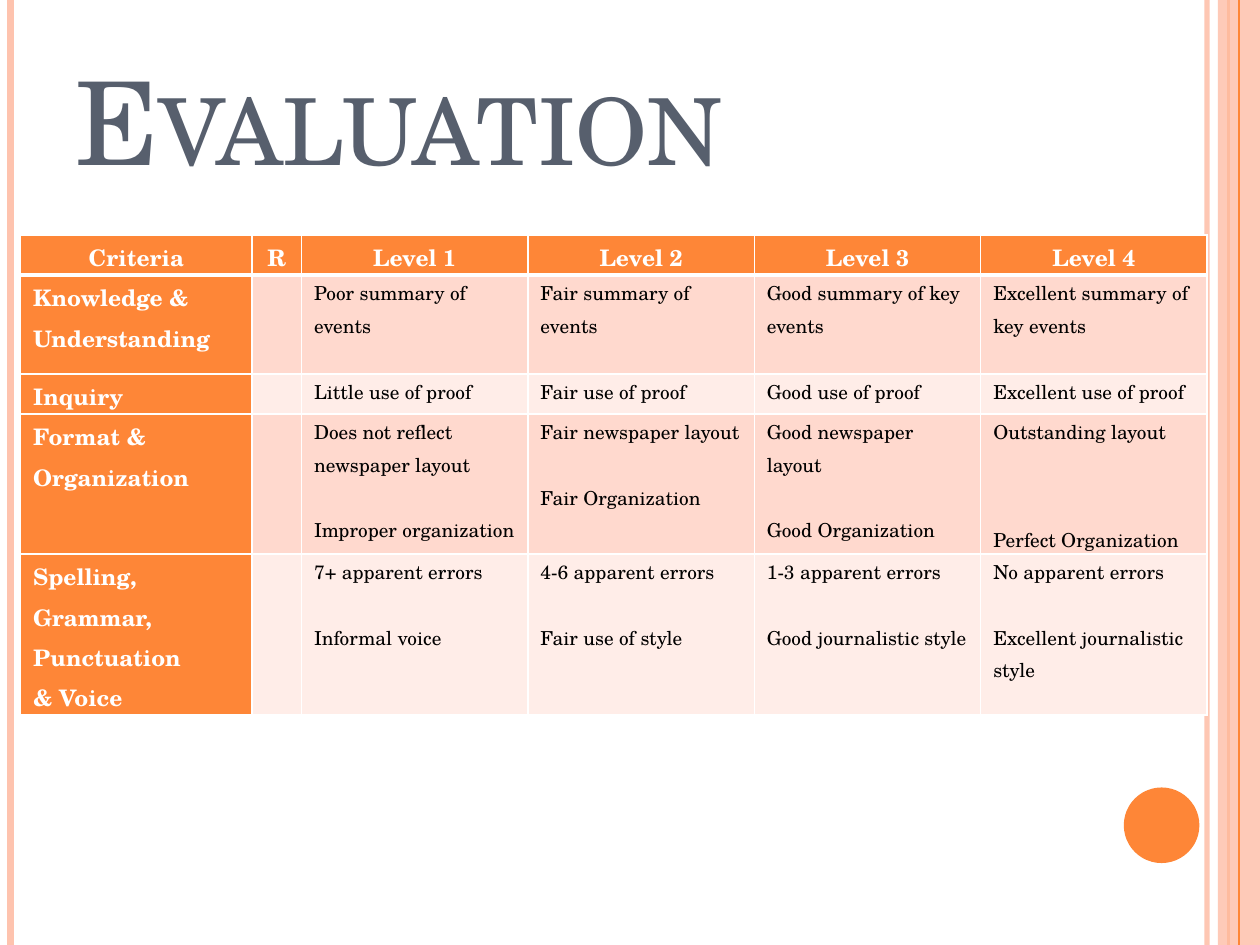
from dataclasses import dataclass

import lxml.etree
import pptx
import pptx.dml.color
import pptx.enum.shapes
import pptx.enum.text
import pptx.oxml.ns
import pptx.util

Pt = pptx.util.Pt
RGBColor = pptx.dml.color.RGBColor
qn = pptx.oxml.ns.qn
Align = pptx.enum.text.PP_ALIGN
Shape = pptx.enum.shapes.MSO_SHAPE

FONT = "TeX Gyre Schola"
ORANGE = RGBColor(0xFE, 0x86, 0x37)
PEACH = RGBColor(0xFE, 0xC3, 0xAE)
SLATE = RGBColor(0x57, 0x5F, 0x6D)
WHITE = RGBColor(0xFF, 0xFF, 0xFF)
BLACK = RGBColor(0, 0, 0)
BANDS = (RGBColor(0xFF, 0xD9, 0xCE), RGBColor(0xFF, 0xED, 0xE8))

SLIDE_WIDTH, SLIDE_HEIGHT = 720, 540
LINE_GAP = 18.6  # one 11 pt line at 1.15 spacing
WIDE_GAP = 42.6
COLUMN_WIDTHS = (132.2, 28.3) + (129.4,) * 4
HEADINGS = ("Criteria", "R", "Level 1", "Level 2", "Level 3", "Level 4")
HEADER_HEIGHT = 22.9


@dataclass
class Stripe:
    x: float
    color: RGBColor
    weight: float
    opacity: int = 100


@dataclass
class Criterion:
    name: tuple[str, ...]
    height: float
    levels: tuple[tuple[str, ...], ...]
    gaps: tuple[float, ...] = (LINE_GAP,) * 4


@dataclass
class TextStyle:
    size: float
    color: RGBColor
    bold: bool = False
    align: Align = Align.LEFT


HEADER_STYLE = TextStyle(13, WHITE, True, Align.CENTER)
NAME_STYLE = TextStyle(13, WHITE, True)
LEVEL_STYLE = TextStyle(11, BLACK)

LEFT_STRIPES = (
    Stripe(689.8, PEACH, 3, 93),
    Stripe(6, PEACH, 4.5),
    Stripe(702, ORANGE, 1.5),
)
INNER_STRIPE = Stripe(708, ORANGE, 0.75)

CRITERIA = (
    Criterion(("Knowledge &", "Understanding"), 56.6, (
        ("Poor summary of events",),
        ("Fair summary of events",),
        ("Good summary of key events",),
        ("Excellent summary of key events",))),
    Criterion(("Inquiry",), 22.9, (
        ("Little use of proof",),
        ("Fair use of proof",),
        ("Good use of proof",),
        ("Excellent use of proof",))),
    Criterion(("Format & Organization",), 80, (
        ("Does not reflect newspaper layout", "Improper organization"),
        ("Fair newspaper layout", "Fair Organization"),
        ("Good newspaper layout", "Good Organization"),
        ("Outstanding layout", "Perfect Organization")),
        (LINE_GAP,) * 3 + (WIDE_GAP,)),
    Criterion(("Spelling, Grammar, Punctuation", "& Voice"), 92, (
        ("7+ apparent errors", "Informal voice"),
        ("4-6 apparent errors", "Fair use of style"),
        ("1-3 apparent errors", "Good journalistic style"),
        ("No apparent errors", "Excellent journalistic style"))),
)


def set_opacity(properties, percent: int) -> None:
    color = next(properties.iter(qn("a:srgbClr")))
    lxml.etree.SubElement(color, qn("a:alpha"), val=str(percent * 1000))


def draw_stripe(slide, stripe: Stripe) -> None:
    line = slide.shapes.add_connector(
        pptx.enum.shapes.MSO_CONNECTOR.STRAIGHT,
        Pt(stripe.x), Pt(0), Pt(stripe.x), Pt(SLIDE_HEIGHT))
    line.line.color.rgb = stripe.color
    line.line.width = Pt(stripe.weight)
    properties = line._element.spPr
    if stripe.opacity < 100:
        set_opacity(properties, stripe.opacity)
    lxml.etree.SubElement(properties, qn("a:effectLst"))


def draw_shape(slide, kind: Shape, box: tuple[float, ...], color: RGBColor):
    shape = slide.shapes.add_shape(kind, *map(Pt, box))
    shape.shadow.inherit = False
    shape.fill.solid()
    shape.fill.fore_color.rgb = color
    shape.line.fill.background()
    return shape


def add_run(paragraph, text: str, style: TextStyle):
    run = paragraph.add_run()
    run.text = text
    run.font.name = FONT
    run.font.size = Pt(style.size)
    run.font.bold = style.bold
    run.font.color.rgb = style.color
    return run


def draw_title(slide, text: str) -> None:
    title = slide.shapes.add_textbox(Pt(36), Pt(21.6), Pt(588), Pt(90))
    frame = title.text_frame
    frame.word_wrap = True
    frame.vertical_anchor = pptx.enum.text.MSO_ANCHOR.BOTTOM
    run = add_run(frame.paragraphs[0], text, TextStyle(66, SLATE))
    run._r.get_or_add_rPr().set("cap", "small")


def set_borders(cell, bottom_weight: float) -> None:
    properties = cell._tc.get_or_add_tcPr()
    weights = {"a:lnL": 1, "a:lnR": 1, "a:lnT": 1, "a:lnB": bottom_weight}
    for index, (side, weight) in enumerate(weights.items()):
        border = lxml.etree.Element(qn(side), w=str(Pt(weight)))
        fill = lxml.etree.SubElement(border, qn("a:solidFill"))
        lxml.etree.SubElement(fill, qn("a:srgbClr"), val=str(WHITE))
        properties.insert(index, border)


def fill_cell(cell, texts: tuple[str, ...], style: TextStyle, color: RGBColor,
              gap: float = 0, bottom_weight: float = 1) -> None:
    cell.margin_left = cell.margin_right = Pt(7.2)
    cell.margin_top = cell.margin_bottom = Pt(0)
    cell.fill.solid()
    cell.fill.fore_color.rgb = color
    set_borders(cell, bottom_weight)
    frame = cell.text_frame
    for index, text in enumerate(texts):
        paragraph = frame.add_paragraph() if index else frame.paragraphs[0]
        paragraph.alignment = style.align
        paragraph.line_spacing = 1.15
        if index and gap:
            paragraph.space_before = Pt(gap)
        add_run(paragraph, text, style)
    if not texts:  # keep an empty cell from stretching its row
        lxml.etree.SubElement(frame.paragraphs[0]._p, qn("a:endParaRPr"),
                              sz=str(style.size * 100))


def draw_rubric(slide) -> None:
    heights = [HEADER_HEIGHT] + [criterion.height for criterion in CRITERIA]
    rubric = slide.shapes.add_table(
        len(heights), len(HEADINGS), Pt(11.8), Pt(134.2),
        Pt(sum(COLUMN_WIDTHS)), Pt(sum(heights))).table
    rubric.first_row = rubric.horz_banding = False
    for column, width in zip(rubric.columns, COLUMN_WIDTHS):
        column.width = Pt(width)
    for row, height in zip(rubric.rows, heights):
        row.height = Pt(height)

    for column, heading in enumerate(HEADINGS):
        fill_cell(rubric.cell(0, column), (heading,), HEADER_STYLE, ORANGE,
                  bottom_weight=3)
    for row, criterion in enumerate(CRITERIA, start=1):
        band = BANDS[(row - 1) % 2]
        fill_cell(rubric.cell(row, 0), criterion.name, NAME_STYLE, ORANGE)
        fill_cell(rubric.cell(row, 1), (), LEVEL_STYLE, band)
        for column, (level, gap) in enumerate(
                zip(criterion.levels, criterion.gaps), start=2):
            fill_cell(rubric.cell(row, column), level, LEVEL_STYLE, band, gap)


def main() -> None:
    deck = pptx.Presentation()
    deck.slide_width, deck.slide_height = Pt(SLIDE_WIDTH), Pt(SLIDE_HEIGHT)
    slide = deck.slides.add_slide(deck.slide_layouts[6])

    # Side decoration
    for stripe in LEFT_STRIPES:
        draw_stripe(slide, stripe)
    side_band = draw_shape(slide, Shape.RECTANGLE,
                           (696, 0, 24, SLIDE_HEIGHT), PEACH)
    set_opacity(side_band._element.spPr, 87)
    draw_stripe(slide, INNER_STRIPE)
    draw_shape(slide, Shape.OVAL, (642.2, 450, 43.2, 43.2), ORANGE)

    # Title and rubric
    draw_title(slide, "Evaluation")
    draw_rubric(slide)
    deck.save("out.pptx")


if __name__ == "__main__":
    main()
